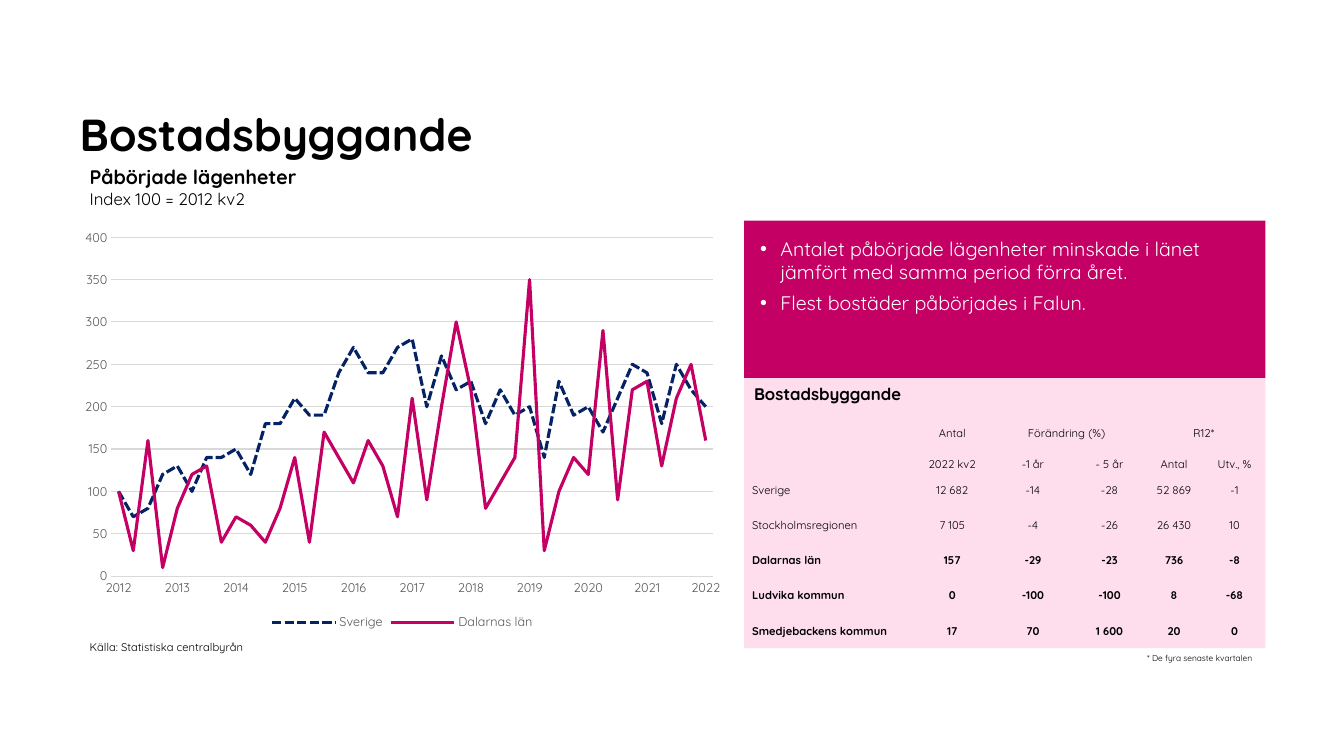
from dataclasses import dataclass

from lxml.etree import SubElement
from pptx import Presentation
from pptx.chart.data import CategoryChartData
from pptx.dml.color import RGBColor
from pptx.enum.chart import XL_CHART_TYPE, XL_LEGEND_POSITION, XL_TICK_MARK
from pptx.enum.dml import MSO_LINE
from pptx.enum.shapes import MSO_SHAPE
from pptx.enum.text import MSO_ANCHOR, PP_ALIGN
from pptx.oxml import parse_xml
from pptx.oxml.ns import nsdecls, qn
from pptx.util import Inches, Pt

FONT = "Quicksand"
BLACK = RGBColor(0, 0, 0)
WHITE = RGBColor(0xFF, 0xFF, 0xFF)
PINK = RGBColor(0xFE, 0xDE, 0xED)
CERISE = RGBColor(0xC4, 0x00, 0x64)
NAVY = RGBColor(0x05, 0x23, 0x64)
GREY = RGBColor(0x59, 0x59, 0x59)
PALE = RGBColor(0xD9, 0xD9, 0xD9)
NO_STYLE = "{2D5ABB26-0587-4C30-8999-92F81FD0307C}"


@dataclass
class Label:
    box: tuple[float, float, float, float]
    text: str
    size: float
    bold: bool = False
    wrap: bool = False


@dataclass
class Series:
    name: str
    color: RGBColor
    dash: MSO_LINE
    values: list[int]


LABELS = [
    Label((0.79, 6.3, 1.81, 0.24), "Källa: Statistiska centralbyrån", 8),
    Label((7.38, 3.76, 1.69, 0.3), "Bostadsbyggande", 12, True),
    Label((11.28, 6.43, 1.29, 0.2), "* De fyra senaste kvartalen", 6),
]
POINTS = [
    "Antalet påbörjade lägenheter minskade i länet jämfört med samma period förra året.",
    "Flest bostäder påbörjades i Falun.",
]
SERIES = [
    Series("Sverige", NAVY, MSO_LINE.SQUARE_DOT, [
        100, 70, 80, 120, 130, 100, 140, 140, 150, 120, 180, 180, 210, 190,
        190, 240, 270, 240, 240, 270, 280, 200, 260, 220, 230, 180, 220, 190,
        200, 140, 230, 190, 200, 170, 210, 250, 240, 180, 250, 220, 200]),
    Series("Dalarnas län", CERISE, MSO_LINE.SOLID, [
        100, 30, 160, 10, 80, 120, 130, 40, 70, 60, 40, 80, 140, 40,
        170, 140, 110, 160, 130, 70, 210, 90, 200, 300, 220, 80, 110, 140,
        350, 30, 100, 140, 120, 290, 90, 220, 230, 130, 210, 250, 160]),
]
COLS = [1.69, 0.75, 0.85, 0.67, 0.61, 0.59]
ROWS = [0.29, 0.31] + [0.35] * 5
HEADS = 2
BOLD_ROW = 4
CELLS = [
    ["", "Antal", "Förändring (%)", "", "R12*", ""],
    ["", "2022 kv2", "-1 år", "- 5 år", "Antal", "Utv., %"],
    ["Sverige", "12 682", "-14", "-28", "52 869", "-1"],
    ["Stockholmsregionen", "7 105", "-4", "-26", "26 430", "10"],
    ["Dalarnas län", "157", "-29", "-23", "736", "-8"],
    ["Ludvika kommun", "0", "-100", "-100", "8", "-68"],
    ["Smedjebackens kommun", "17", "70", "1 600", "20", "0"],
]


def style(font, size: float, color: RGBColor = BLACK, bold: bool = False) -> None:
    font.name, font.size, font.bold = FONT, Pt(size), bold
    font.color.rgb = color


def inset(item, left: float, top: float, right: float, base: float) -> None:
    item.margin_left, item.margin_top = Inches(left), Inches(top)
    item.margin_right, item.margin_bottom = Inches(right), Inches(base)


def add_label(slide, label: Label):
    frame = slide.shapes.add_textbox(*map(Inches, label.box)).text_frame
    frame.word_wrap = label.wrap
    para = frame.paragraphs[0]
    if label.text:
        para.text = label.text
        style(para.font, label.size, bold=label.bold)
    return frame


def add_panel(slide, box: tuple, color: RGBColor):
    panel = slide.shapes.add_shape(MSO_SHAPE.RECTANGLE, *map(Inches, box))
    panel.shadow.inherit = False
    panel.fill.solid()
    panel.fill.fore_color.rgb = color
    panel.line.fill.background()
    return panel.text_frame


def add_points(frame) -> None:
    """Fill the panel with bulleted text."""
    inset(frame, 0.16, 0.16, 0.16, 0.16)
    frame.word_wrap = True
    frame.vertical_anchor = MSO_ANCHOR.TOP
    for i, text in enumerate(POINTS):
        para = frame.add_paragraph() if i else frame.paragraphs[0]
        para.text = text
        para.alignment = PP_ALIGN.LEFT
        if i:
            para.space_before = Pt(5)
        props = para._p.get_or_add_pPr()
        props.set("marL", str(Inches(0.2)))
        props.set("indent", str(Inches(-0.2)))
        SubElement(props, qn("a:buFont")).set("typeface", "Arial")
        SubElement(props, qn("a:buChar")).set("char", "•")
        style(para.font, 14, WHITE)


def add_figures(slide) -> None:
    """Add the table of housing figures."""
    table = slide.shapes.add_table(
        len(ROWS), len(COLS), Inches(7.38), Inches(4.08),
        Inches(sum(COLS)), Inches(sum(ROWS))).table
    table.first_row = table.horz_banding = False
    table._tbl.tblPr.find(qn("a:tableStyleId")).text = NO_STYLE
    for col, width in zip(table.columns, COLS):
        col.width = Inches(width)
    for row, height in zip(table.rows, ROWS):
        row.height = Inches(height)
    for start in (2, 4):
        table.cell(0, start).merge(table.cell(0, start + 1))
    for r, texts in enumerate(CELLS):
        for c, text in enumerate(texts):
            cell = table.cell(r, c)
            cell.fill.background()
            inset(cell, 0.01 if c else 0.08, 0.01, 0.01, 0)
            cell.vertical_anchor = MSO_ANCHOR.BOTTOM if r < HEADS else MSO_ANCHOR.MIDDLE
            para = cell.text_frame.paragraphs[0]
            para.text = text
            para.alignment = PP_ALIGN.CENTER if c else PP_ALIGN.LEFT
            style(para.font, 8, bold=r >= BOLD_ROW)


def rule(line) -> None:
    line.color.rgb = PALE
    line.width = Pt(0.75)


def add_graph(slide) -> None:
    """Add the line chart of started flats."""
    data = CategoryChartData()
    data.categories = [
        "" if i % 4 else str(2012 + i // 4) for i in range(len(SERIES[0].values))]
    for item in SERIES:
        data.add_series(item.name, item.values)
    chart = slide.shapes.add_chart(
        XL_CHART_TYPE.LINE, Inches(0.71), Inches(2.19), Inches(6.56), Inches(4.1),
        data).chart
    style(chart.font, 10)
    chart.has_title = False
    chart.has_legend = True
    chart.legend.position = XL_LEGEND_POSITION.BOTTOM
    chart.legend.include_in_layout = False
    style(chart.legend.font, 9, GREY)
    for line, item in zip(chart.plots[0].series, SERIES):
        line.smooth = False
        line.format.line.color.rgb = item.color
        line.format.line.width = Pt(2.25)
        line.format.line.dash_style = item.dash
    years, scale = chart.category_axis, chart.value_axis
    for axis in (years, scale):
        axis.major_tick_mark = axis.minor_tick_mark = XL_TICK_MARK.NONE
        style(axis.tick_labels.font, 9, GREY)
    rule(years.format.line)
    scale.format.line.fill.background()
    rule(scale.major_gridlines.format.line)
    scale.minimum_scale, scale.maximum_scale, scale.major_unit = 0, 400, 50
    area = chart._chartSpace.chart.plotArea
    for old in area.findall(qn("c:layout")):
        area.remove(old)
    spots = "".join(f'<c:{k} val="{v}"/>' for k, v in (
        ("layoutTarget", "inner"), ("xMode", "edge"), ("yMode", "edge"),
        ("x", 0.06), ("y", 0.04), ("w", 0.91), ("h", 0.82)))
    area.insert(0, parse_xml(
        f'<c:layout {nsdecls("c")}><c:manualLayout>{spots}</c:manualLayout></c:layout>'))


def main() -> None:
    deck = Presentation()
    deck.slide_width, deck.slide_height = Inches(13.33), Inches(7.5)
    slide = deck.slides.add_slide(deck.slide_layouts[6])
    title = add_label(slide, Label((0.79, 0.37, 9.22, 1.22), "Bostadsbyggande", 32, True, True))
    inset(title, 0, 0, 0, 0)
    title.vertical_anchor = MSO_ANCHOR.BOTTOM
    add_panel(slide, (7.38, 3.75, 5.17, 2.68), PINK)
    add_points(add_panel(slide, (7.38, 2.19, 5.17, 1.56), CERISE))
    for label in LABELS:
        add_label(slide, label)
    head = add_label(slide, Label((0.79, 1.59, 4.58, 0.54), "", 14, wrap=True)).paragraphs[0]
    for text, size, bold in (("Påbörjade lägenheter", 14, True),
                             ("Index 100 = 2012 kv2", 12, False)):
        if head.runs:
            head.add_line_break()
        run = head.add_run()
        run.text = text
        style(run.font, size, bold=bold)
    add_figures(slide)
    add_graph(slide)
    deck.save("out.pptx")


if __name__ == "__main__":
    main()
